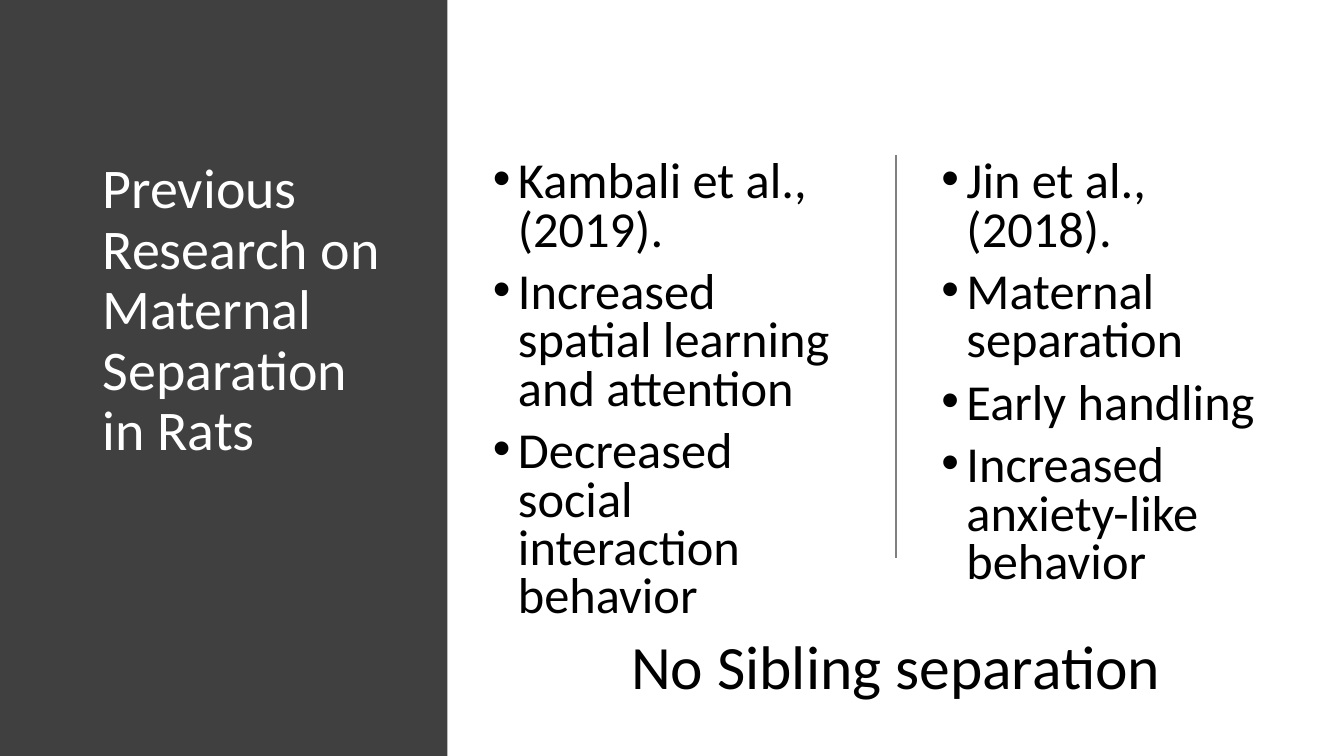
from lxml import etree
from pptx import Presentation
from pptx.dml.color import RGBColor
from pptx.enum.shapes import MSO_CONNECTOR, MSO_SHAPE
from pptx.enum.text import MSO_ANCHOR, MSO_AUTO_SIZE, PP_ALIGN
from pptx.oxml.ns import qn
from pptx.util import Pt

RECTANGLE = MSO_SHAPE.RECTANGLE
STRAIGHT = MSO_CONNECTOR.STRAIGHT
TOP = MSO_ANCHOR.TOP
NO_FIT = MSO_AUTO_SIZE.NONE
LEFT, CENTER = PP_ALIGN.LEFT, PP_ALIGN.CENTER

WIDTH, HEIGHT = 960, 540
TITLE_ONLY = 5
CONTENT_TOP, CONTENT_HEIGHT = 110.9, 343.4


def color(hex_code):
    return RGBColor.from_string(hex_code)


def add_bullet(paragraph, indent):
    properties = paragraph._p.get_or_add_pPr()
    properties.set("marL", str(Pt(indent)))
    properties.set("indent", str(Pt(-indent)))
    etree.SubElement(properties, qn("a:buFont")).set("typeface", "Arial")
    etree.SubElement(properties, qn("a:buChar")).set("char", "•")


def write(frame, *texts, size, ink="000000", font="Calibri", align=LEFT,
          line_spacing=1.0, gap=0, bullet_indent=None, wrap=True):
    frame.word_wrap = wrap
    frame.auto_size = NO_FIT
    frame.vertical_anchor = TOP
    for index, text in enumerate(texts):
        paragraph = frame.add_paragraph() if index else frame.paragraphs[0]
        paragraph.text = text
        paragraph.alignment = align
        paragraph.line_spacing = line_spacing
        paragraph.space_before = Pt(gap if index else 0)
        if bullet_indent:
            add_bullet(paragraph, bullet_indent)
        paragraph.font.name = font
        paragraph.font.size = Pt(size)
        paragraph.font.color.rgb = color(ink)


class SlideBuilder:
    panel_fill = "404040"
    rule_color = "808080"
    title_ink = "FFFFFF"

    def __init__(self, slide):
        self.slide = slide

    def title(self, text, left, top, width, height):
        title = self.slide.shapes.title
        title.left, title.top = Pt(left), Pt(top)
        title.width, title.height = Pt(width), Pt(height)
        write(title.text_frame, text, size=40, ink=self.title_ink, line_spacing=0.9)

    def panel(self, left, top, width, height):
        panel = self.slide.shapes.add_shape(
            RECTANGLE, Pt(left), Pt(top), Pt(width), Pt(height))
        panel.shadow.inherit = False
        panel.fill.solid()
        panel.fill.fore_color.rgb = color(self.panel_fill)
        panel.line.fill.background()
        # The panel lies behind the title
        self.slide.shapes.title.element.addprevious(panel.element)

    def text(self, *texts, left, top, width, height, **style):
        box = self.slide.shapes.add_textbox(
            Pt(left), Pt(top), Pt(width), Pt(height))
        write(box.text_frame, *texts, **style)

    def findings(self, *items, left, width):
        self.text(*items, left=left, top=CONTENT_TOP, width=width,
                  height=CONTENT_HEIGHT, size=36, line_spacing=0.8, gap=10,
                  bullet_indent=18)

    def divider(self, x, top, bottom):
        divider = self.slide.shapes.add_connector(
            STRAIGHT, Pt(x), Pt(top), Pt(x), Pt(bottom))
        divider.line.color.rgb = color(self.rule_color)
        divider.line.width = Pt(1)
        etree.SubElement(divider.element.spPr, qn("a:effectLst"))


def main():
    deck = Presentation()
    deck.slide_width, deck.slide_height = Pt(WIDTH), Pt(HEIGHT)
    builder = SlideBuilder(deck.slides.add_slide(deck.slide_layouts[TITLE_ONLY]))

    # Dark side panel with the title
    builder.panel(0, 0, 319.7, HEIGHT)
    builder.title("Previous Research on Maternal Separation in Rats",
                  66.2, CONTENT_TOP, 228.2, CONTENT_HEIGHT)

    # Findings of the two studies
    builder.findings("Kambali et al., (2019).",
                     "Increased spatial learning and attention",
                     "Decreased social interaction behavior",
                     left=344.9, width=270)
    builder.divider(640, CONTENT_TOP, 398.9)
    builder.findings("Jin et al., (2018).",
                     "Maternal separation",
                     "Early handling",
                     "Increased anxiety-like behavior",
                     left=665.3, width=252)

    # Shared limitation
    builder.text("No Sibling separation", left=441.4, top=445, width=397.4,
                 height=60.5, size=44, align=CENTER, wrap=False)

    deck.save("out.pptx")


if __name__ == "__main__":
    main()
